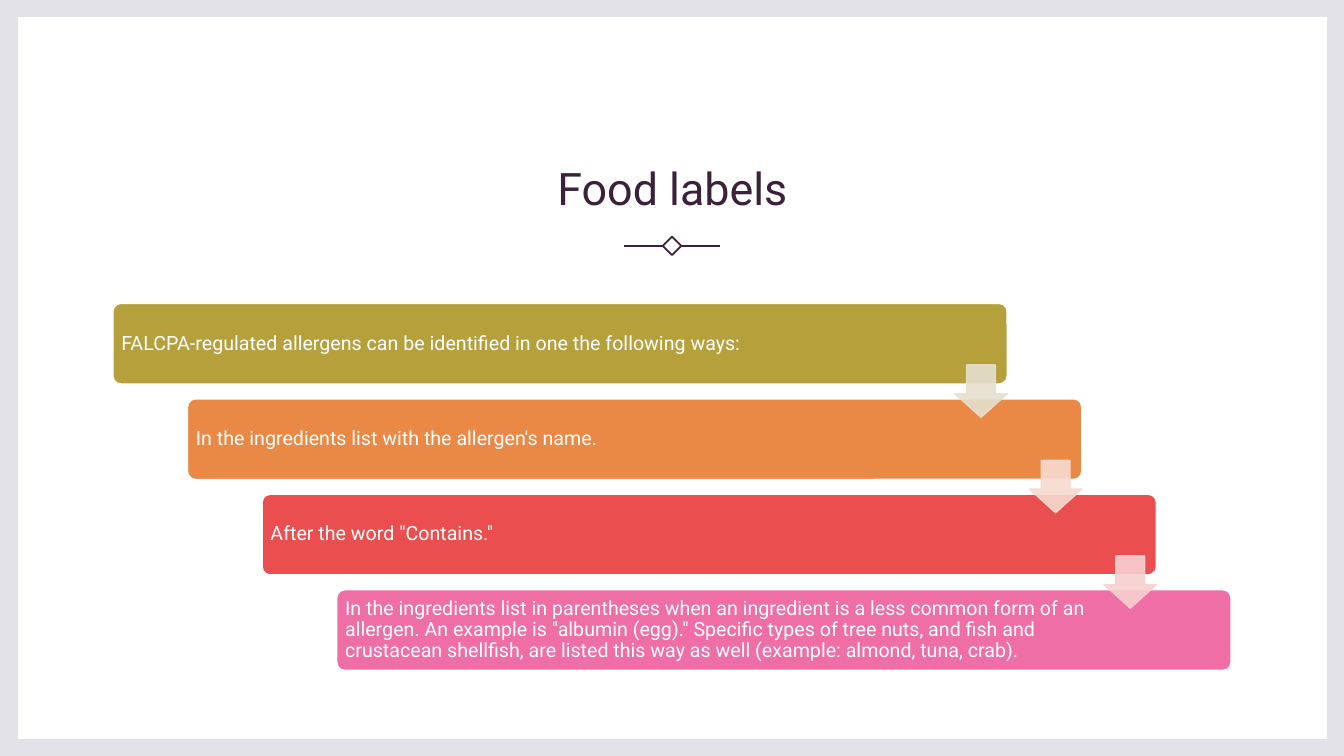
"""Build the Food labels slide with its descending staircase of steps."""
from dataclasses import dataclass

from lxml.etree import SubElement
from pptx import Presentation
from pptx.dml.color import RGBColor
from pptx.enum.shapes import MSO_CONNECTOR, MSO_SHAPE
from pptx.enum.text import MSO_ANCHOR, PP_ALIGN
from pptx.oxml.ns import qn
from pptx.util import Inches, Pt

TITLE = "Food labels"
STEPS = [
    ("FALCPA-regulated allergens can be identified in one the following ways:", "B6A03C"),
    ("In the ingredients list with the allergen's name.", "EA8946"),
    ('After the word "Contains."', "EB4E4F"),
    ("In the ingredients list in parentheses when an ingredient is a less common "
     'form of an allergen. An example is "albumin (egg)." Specific types of tree '
     "nuts, and fish and crustacean shellfish, are listed this way as well "
     "(example: almond, tuna, crab).", "EE6EA5"),
]
ARROW_COLORS = ["E5DFCE", "F7DACF", "F7D0D0"]


@dataclass(frozen=True)
class Theme:
    font: str = "Roboto"
    ink: str = "3B213A"
    paper: str = "FFFFFF"
    frame: str = "E3E2E8"
    title_size: int = 32
    step_size: int = 14
    rule_width: float = 1.25
    edge_width: float = 1
    arrow_opacity: int = 90


THEME = Theme()
SLIDE_W, SLIDE_H = 13.33, 7.5
BAR_X, BAR_Y, BAR_W, BAR_H = 1.12, 3.01, 8.87, 0.8
STEP_X, STEP_Y = 0.74, 0.947
ARROW_X, ARROW_Y, ARROW = 9.47, 3.62, 0.52
RULE_Y, DIAMOND = 2.44, 0.13
RULES = [(6.19, 6.58), (6.76, 7.14)]


def rgb(color):
    return RGBColor.from_string(color)


def add_shape(s, kind, x, y, w, h, fill=None, line=None, width=1):
    sp = s.shapes.add_shape(kind, Inches(x), Inches(y), Inches(w), Inches(h))
    sp.shadow.inherit = False
    if fill:
        sp.fill.solid()
        sp.fill.fore_color.rgb = rgb(fill)
    else:
        sp.fill.background()
    if line:
        sp.line.color.rgb = rgb(line)
        sp.line.width = Pt(width)
    else:
        sp.line.fill.background()
    return sp


def set_text(sp, text, size, color, align, anchor, spacing):
    tf = sp.text_frame
    tf.word_wrap = True
    tf.vertical_anchor = anchor
    tf.text = text
    p = tf.paragraphs[0]
    p.alignment = align
    p.line_spacing = spacing
    font = p.runs[0].font
    font.name = THEME.font
    font.size = Pt(size)
    font.color.rgb = rgb(color)
    return tf


def set_opacity(sp, percent):
    for clr in sp._element.spPr.iter(qn("a:srgbClr")):
        SubElement(clr, qn("a:alpha")).set("val", str(percent * 1000))


def add_frame(s):
    add_shape(s, MSO_SHAPE.RECTANGLE, 0, 0, SLIDE_W, SLIDE_H, THEME.frame)
    add_shape(s, MSO_SHAPE.RECTANGLE, 0.18, 0.17, 12.98, 7.16, THEME.paper)


def add_title(s):
    box = s.shapes.add_textbox(Inches(1.13), Inches(1.05), Inches(11.08), Inches(1.13))
    set_text(box, TITLE, THEME.title_size, THEME.ink,
             PP_ALIGN.CENTER, MSO_ANCHOR.BOTTOM, 1.1)


def add_ornament(s):
    diamond = add_shape(s, MSO_SHAPE.RECTANGLE, (SLIDE_W - DIAMOND) / 2,
                        RULE_Y - DIAMOND / 2, DIAMOND, DIAMOND,
                        line=THEME.ink, width=THEME.rule_width)
    diamond.rotation = 45
    for start, end in RULES:
        rule = s.shapes.add_connector(MSO_CONNECTOR.STRAIGHT, Inches(start),
                                      Inches(RULE_Y), Inches(end), Inches(RULE_Y))
        rule.line.color.rgb = rgb(THEME.ink)
        rule.line.width = Pt(THEME.rule_width)
        SubElement(rule._element.spPr, qn("a:effectLst"))


def add_steps(s):
    for i, (text, color) in enumerate(STEPS):
        bar = add_shape(s, MSO_SHAPE.ROUNDED_RECTANGLE, BAR_X + i * STEP_X,
                        BAR_Y + i * STEP_Y, BAR_W, BAR_H,
                        color, THEME.paper, THEME.edge_width)
        bar.adjustments[0] = 0.1
        tf = set_text(bar, text, THEME.step_size, THEME.paper,
                      PP_ALIGN.LEFT, MSO_ANCHOR.MIDDLE, 0.9)
        tf.margin_left = tf.margin_top = tf.margin_bottom = Inches(0.06)
        tf.margin_right = Inches(1.33)


def add_arrows(s):
    for i, color in enumerate(ARROW_COLORS):
        arrow = add_shape(s, MSO_SHAPE.DOWN_ARROW, ARROW_X + i * STEP_X,
                          ARROW_Y + i * STEP_Y, ARROW, ARROW,
                          color, color, THEME.edge_width)
        arrow.adjustments[0] = 0.55
        arrow.adjustments[1] = 0.45
        set_opacity(arrow, THEME.arrow_opacity)


def main():
    prs = Presentation()
    prs.slide_width, prs.slide_height = Inches(SLIDE_W), Inches(SLIDE_H)
    s = prs.slides.add_slide(prs.slide_layouts[6])
    add_frame(s)
    add_title(s)
    add_ornament(s)
    add_steps(s)
    add_arrows(s)
    prs.save("out.pptx")


if __name__ == "__main__":
    main()
